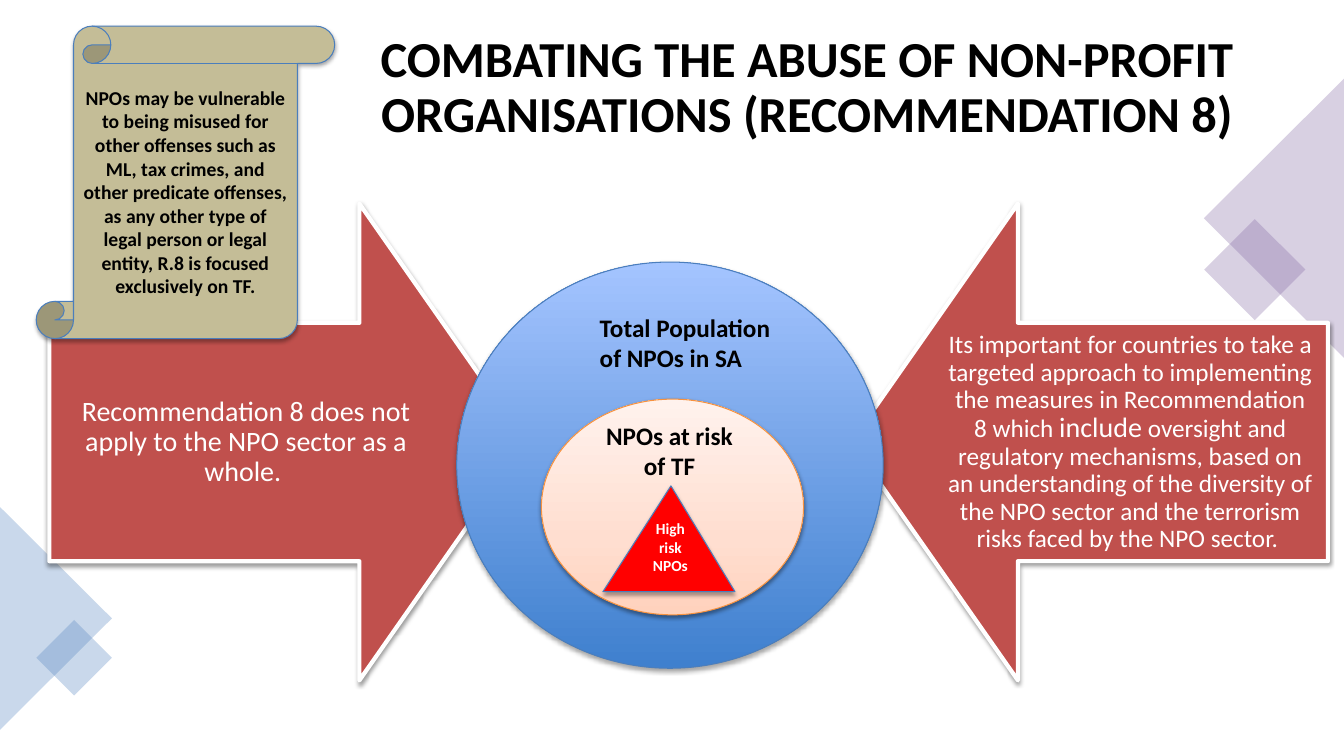
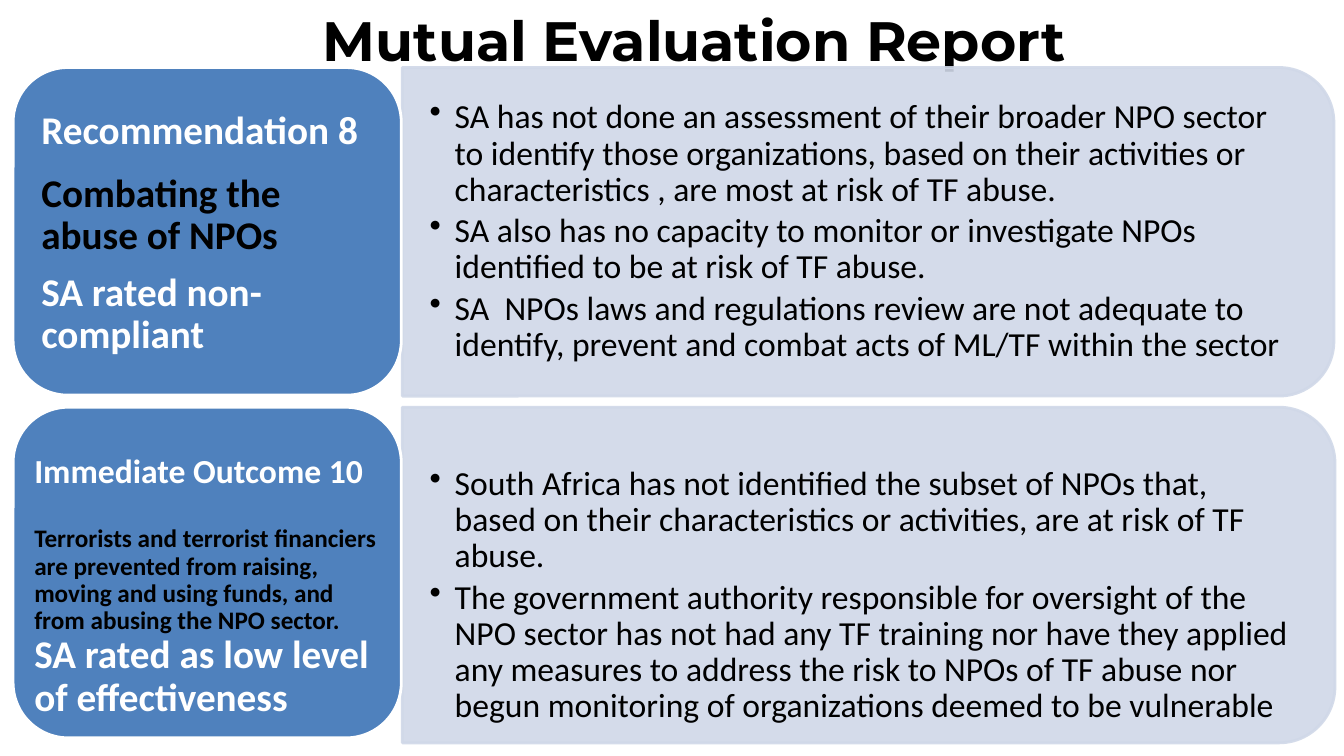
from dataclasses import dataclass
from typing import Optional

import lxml.etree
import pptx
import pptx.dml.color
import pptx.enum.shapes
import pptx.enum.text
import pptx.oxml.ns
import pptx.util

Inches = pptx.util.Inches
Pt = pptx.util.Pt
RGBColor = pptx.dml.color.RGBColor
Shape = pptx.enum.shapes.MSO_SHAPE
Align = pptx.enum.text.PP_ALIGN
Anchor = pptx.enum.text.MSO_ANCHOR
qn = pptx.oxml.ns.qn

BLACK = RGBColor(0x00, 0x00, 0x00)
WHITE = RGBColor(0xFF, 0xFF, 0xFF)
RED = RGBColor(0xFF, 0x00, 0x00)
BRICK = RGBColor(0xC0, 0x50, 0x4D)
BLUE = RGBColor(0x4F, 0x81, 0xBD)
OUTLINE_BLUE = RGBColor(0x4B, 0x7E, 0xBC)
PALE_BLUE = RGBColor(0xD0, 0xD8, 0xE8)
PURPLE = RGBColor(0x80, 0x64, 0xA2)
TAN = RGBColor(0xC4, 0xBD, 0x97)
ORANGE = RGBColor(0xF6, 0x92, 0x40)
BLUE_GRADIENT = ((0, RGBColor(0x3F, 0x80, 0xCE)), (100, RGBColor(0xA4, 0xC4, 0xFF)))
PEACH_GRADIENT = (
    (0, RGBColor(0xFF, 0xD2, 0xBD)),
    (35, RGBColor(0xFF, 0xDE, 0xD0)),
    (100, RGBColor(0xFF, 0xF2, 0xED)),
)
BODY_FONT = "Calibri"


@dataclass(frozen=True)
class Box:
    left: float
    top: float
    width: float
    height: float

    def lengths(self) -> list:
        return [Inches(value) for value in (self.left, self.top, self.width, self.height)]

    def turned(self) -> "Box":
        """The frame that covers this box once rotated by a quarter turn."""
        shift = (self.width - self.height) / 2
        return Box(self.left + shift, self.top - shift, self.height, self.width)


@dataclass(frozen=True)
class Run:
    text: str
    size: float
    color: RGBColor = BLACK
    bold: bool = False
    font: str = BODY_FONT


@dataclass(frozen=True)
class Paragraph:
    runs: tuple
    spacing: float = 1.0
    after: float = 0
    bullet: bool = False


@dataclass(frozen=True)
class Shadow:
    opacity: int
    distance: float


@dataclass(frozen=True)
class Decoration:
    kind: Shape
    box: Box
    rotation: int
    color: RGBColor


@dataclass(frozen=True)
class SideArrow:
    box: Box
    rotation: int
    text_box: Box
    inset: float
    runs: tuple


@dataclass(frozen=True)
class FindingRow:
    label_box: Box
    label_text_box: Box
    label_insets: tuple
    label: tuple
    panel_box: Box
    panel_text_box: Box
    findings: tuple


SOFT_SHADOW = Shadow(35, 1.8)
STRONG_SHADOW = Shadow(38, 1.6)

DECORATIONS = (
    Decoration(Shape.RECTANGLE, Box(12.09, 2.32, 0.71, 0.71), 45, PURPLE),
    Decoration(Shape.ISOSCELES_TRIANGLE, Box(11.25, 1.47, 2.77, 1.39), 270, PURPLE),
    Decoration(Shape.ISOSCELES_TRIANGLE, Box(-0.55, 5.58, 2.21, 1.11), 90, BLUE),
    Decoration(Shape.RECTANGLE, Box(0.47, 6.26, 0.53, 0.53), 45, BLUE),
)

ARROWS = (
    SideArrow(
        Box(0.49, 2.02, 4.73, 4.73), 270, Box(0.49, 3.21, 3.9, 2.36), 0.16,
        (Run("Recommendation 8 does not apply to the NPO sector as a whole. ", 20, WHITE),),
    ),
    SideArrow(
        Box(8.44, 2.02, 4.73, 4.73), 90, Box(9.26, 3.21, 3.9, 2.36), 0.14,
        (
            Run("Its important for countries to take a targeted approach to implementing "
                "the measures in Recommendation 8 which ", 18, WHITE),
            Run("include", 20, WHITE),
            Run(" oversight and regulatory mechanisms, based on an understanding of the "
                "diversity of the NPO sector and the terrorism risks faced by the NPO "
                "sector. ", 18, WHITE),
        ),
    ),
)

ROWS = (
    FindingRow(
        Box(0.13, 0.67, 3.85, 3.25), Box(0.29, 0.83, 3.54, 2.93), (0.12, 0.06),
        (
            Paragraph((Run("Recommendation 8", 28, WHITE, True),), after=15),
            Paragraph((Run("Combating the abuse of NPOs", 28, BLACK, True),), 0.9, 10),
            Paragraph((Run("SA rated non-compliant", 28, WHITE, True),), 0.9, 10),
        ),
        Box(3.99, 0.67, 9.24, 3.26), Box(3.99, 0.83, 9.08, 2.94),
        (
            "SA has not done an assessment of their broader NPO sector to identify those "
            "organizations, based on their activities or characteristics , are most at "
            "risk of TF abuse.",
            "SA also has no capacity to monitor or investigate NPOs identified to be at "
            "risk of TF abuse.",
            "SA  NPOs laws and regulations review are not adequate to identify, prevent "
            "and combat acts of ML/TF within the sector",
        ),
    ),
    FindingRow(
        Box(0.13, 4.04, 3.85, 3.28), Box(0.29, 4.32, 3.53, 2.96), (0.05, 0.03),
        (
            Paragraph((Run("Immediate Outcome 10", 24, WHITE, True),), after=26),
            Paragraph(
                (
                    Run("Terrorists and terrorist financiers are prevented from raising, "
                        "moving and using funds, and from abusing the NPO sector. ",
                        18, BLACK, True),
                    Run("SA rated as low level of effectiveness", 28, WHITE, True),
                ), 0.9, 10),
        ),
        Box(3.99, 4.04, 9.25, 3.33), Box(3.99, 4.41, 9.09, 3),
        (
            "South Africa has not identified the subset of NPOs that, based on their "
            "characteristics or activities, are at risk of TF abuse.",
            "The government authority responsible for oversight of the NPO sector has not "
            "had any TF training nor have they applied any measures to address the risk to "
            "NPOs of TF abuse nor begun monitoring of organizations deemed to be vulnerable",
        ),
    ),
)


def set_opacity(color_parent, percent: int) -> None:
    for color in color_parent.iter(qn("a:srgbClr")):
        lxml.etree.SubElement(color, qn("a:alpha"), val=str(percent * 1000))


def set_gradient(shape, stops: tuple) -> None:
    """Fill from bottom to top with (percent, colour) stops."""
    shape.fill.gradient()
    shape.fill.gradient_angle = 90
    stop_list = shape._element.spPr.find(".//" + qn("a:gsLst"))
    for old_stop in list(stop_list):
        stop_list.remove(old_stop)
    for percent, color in stops:
        stop = lxml.etree.SubElement(stop_list, qn("a:gs"), pos=str(percent * 1000))
        lxml.etree.SubElement(stop, qn("a:srgbClr"), val=str(color))


def set_shadow(shape, shadow: Shadow) -> None:
    effects = shape._element.spPr.find(qn("a:effectLst"))
    outer = lxml.etree.SubElement(
        effects, qn("a:outerShdw"), blurRad=str(Pt(3.1)), dist=str(Pt(shadow.distance)),
        dir="5400000", rotWithShape="0")
    lxml.etree.SubElement(outer, qn("a:srgbClr"), val=str(BLACK))
    set_opacity(outer, shadow.opacity)


def add_shape(slide, kind: Shape, box: Box, *, fill: Optional[RGBColor] = None,
              gradient: tuple = (), line: Optional[RGBColor] = None,
              line_width: float = 0.75, opacity: int = 100, rotation: int = 0,
              adjustments: tuple = (), shadow: Optional[Shadow] = None):
    shape = slide.shapes.add_shape(kind, *box.lengths())
    shape.rotation = rotation
    for index, value in enumerate(adjustments):
        shape.adjustments[index] = value
    if gradient:
        set_gradient(shape, gradient)
    else:
        shape.fill.solid()
        shape.fill.fore_color.rgb = fill
    if line is None:
        shape.line.fill.background()
    else:
        shape.line.color.rgb = line
        shape.line.width = Pt(line_width)
    if opacity < 100:
        set_opacity(shape._element.spPr, opacity)
    shape.shadow.inherit = False
    if shadow:
        set_shadow(shape, shadow)
    return shape


def write_text(shape, paragraphs: tuple, *, align: Align = Align.LEFT,
               anchor: Anchor = Anchor.MIDDLE, insets: tuple = (0.1, 0.05)) -> None:
    frame = shape.text_frame
    frame.word_wrap = True
    frame.vertical_anchor = anchor
    frame.margin_left = frame.margin_right = Inches(insets[0])
    frame.margin_top = frame.margin_bottom = Inches(insets[1])
    for index, content in enumerate(paragraphs):
        paragraph = frame.add_paragraph() if index else frame.paragraphs[0]
        paragraph.alignment = align
        paragraph.line_spacing = content.spacing
        paragraph.space_after = Pt(content.after)
        if content.bullet:
            properties = paragraph._p.get_or_add_pPr()
            properties.set("marL", str(Inches(0.25)))
            properties.set("indent", str(Inches(-0.25)))
            lxml.etree.SubElement(properties, qn("a:buChar"), char="•")
        for item in content.runs:
            run = paragraph.add_run()
            run.text = item.text
            run.font.name = item.font
            run.font.size = Pt(item.size)
            run.font.bold = item.bold
            run.font.color.rgb = item.color


def add_text(slide, box: Box, paragraphs: tuple, **text_format) -> None:
    write_text(slide.shapes.add_textbox(*box.lengths()), paragraphs, **text_format)


def add_title(slide, box: Box, text: str, size: float, *, font: str = BODY_FONT,
              spacing: float = 1.0) -> None:
    title = Paragraph((Run(text, size, BLACK, True, font),), spacing)
    add_text(slide, box, (title,), align=Align.CENTER)


def build_abuse_slide(slide) -> None:
    add_title(slide, Box(2.84, 0.26, 10.33, 1.24),
              "COMBATING THE ABUSE OF NON-PROFIT ORGANISATIONS (RECOMMENDATION 8)",
              36, spacing=0.9)
    for item in DECORATIONS:
        add_shape(slide, item.kind, item.box, fill=item.color, opacity=30,
                  rotation=item.rotation)
    for arrow in ARROWS:
        add_shape(slide, Shape.DOWN_ARROW, arrow.box, fill=BRICK, line=WHITE, line_width=3,
                  rotation=arrow.rotation, adjustments=(0.5, 0.35), shadow=STRONG_SHADOW)
        add_text(slide, arrow.text_box, (Paragraph(arrow.runs, 0.9),),
                 align=Align.CENTER, insets=(arrow.inset, arrow.inset))

    add_shape(slide, Shape.OVAL, Box(4.53, 2.6, 4.23, 4.03), gradient=BLUE_GRADIENT,
              line=OUTLINE_BLUE, shadow=SOFT_SHADOW)
    add_shape(slide, Shape.OVAL, Box(5.37, 3.96, 2.6, 2.14), gradient=PEACH_GRADIENT,
              line=ORANGE, shadow=STRONG_SHADOW)
    add_shape(slide, Shape.ISOSCELES_TRIANGLE, Box(5.98, 4.82, 1.31, 1.05), fill=RED,
              line=OUTLINE_BLUE, adjustments=(0.515,), shadow=SOFT_SHADOW)
    for box, text, size, color, align in (
        (Box(6.32, 5.08, 0.66, 0.7), "High risk NPOs", 11, WHITE, Align.CENTER),
        (Box(5.85, 3.04, 2.06, 0.71), "Total Population of NPOs in SA", 18, BLACK, Align.LEFT),
        (Box(5.8, 4.11, 1.68, 0.71), "NPOs at risk of TF", 18, BLACK, Align.CENTER),
    ):
        add_text(slide, box, (Paragraph((Run(text, size, color, True),)),), align=align)

    scroll = add_shape(slide, Shape.VERTICAL_SCROLL, Box(0.36, 0.26, 2.96, 3.1), fill=TAN,
                       line=OUTLINE_BLUE, shadow=SOFT_SHADOW)
    note = Run("NPOs may be vulnerable to being misused for other offenses such as ML, tax "
               "crimes, and other predicate offenses, as any other type of legal person or "
               "legal entity, R.8 is focused exclusively on TF.", 14, BLACK, True)
    write_text(scroll, (Paragraph((note,)),), align=Align.CENTER)


def build_evaluation_slide(slide) -> None:
    add_title(slide, Box(2.01, 0.11, 9.75, 0.56), "Mutual Evaluation Report", 39.6,
              font="Montserrat")
    for row in ROWS:
        add_shape(slide, Shape.ROUND_2_SAME_RECTANGLE, row.panel_box.turned(), rotation=90,
                  fill=PALE_BLUE, line=PALE_BLUE, line_width=2, opacity=90)
        findings = tuple(Paragraph((Run(text, 24),), 0.9, 3.6, True) for text in row.findings)
        add_text(slide, row.panel_text_box, findings, insets=(0.27, 0.14))
        add_shape(slide, Shape.ROUNDED_RECTANGLE, row.label_box, fill=BLUE, line=WHITE,
                  line_width=2)
        add_text(slide, row.label_text_box, row.label, insets=row.label_insets)


def main() -> None:
    presentation = pptx.Presentation()
    presentation.slide_width = Inches(13.33)
    presentation.slide_height = Inches(7.5)
    for build in (build_abuse_slide, build_evaluation_slide):
        build(presentation.slides.add_slide(presentation.slide_layouts[6]))
    presentation.save("out.pptx")


if __name__ == "__main__":
    main()
